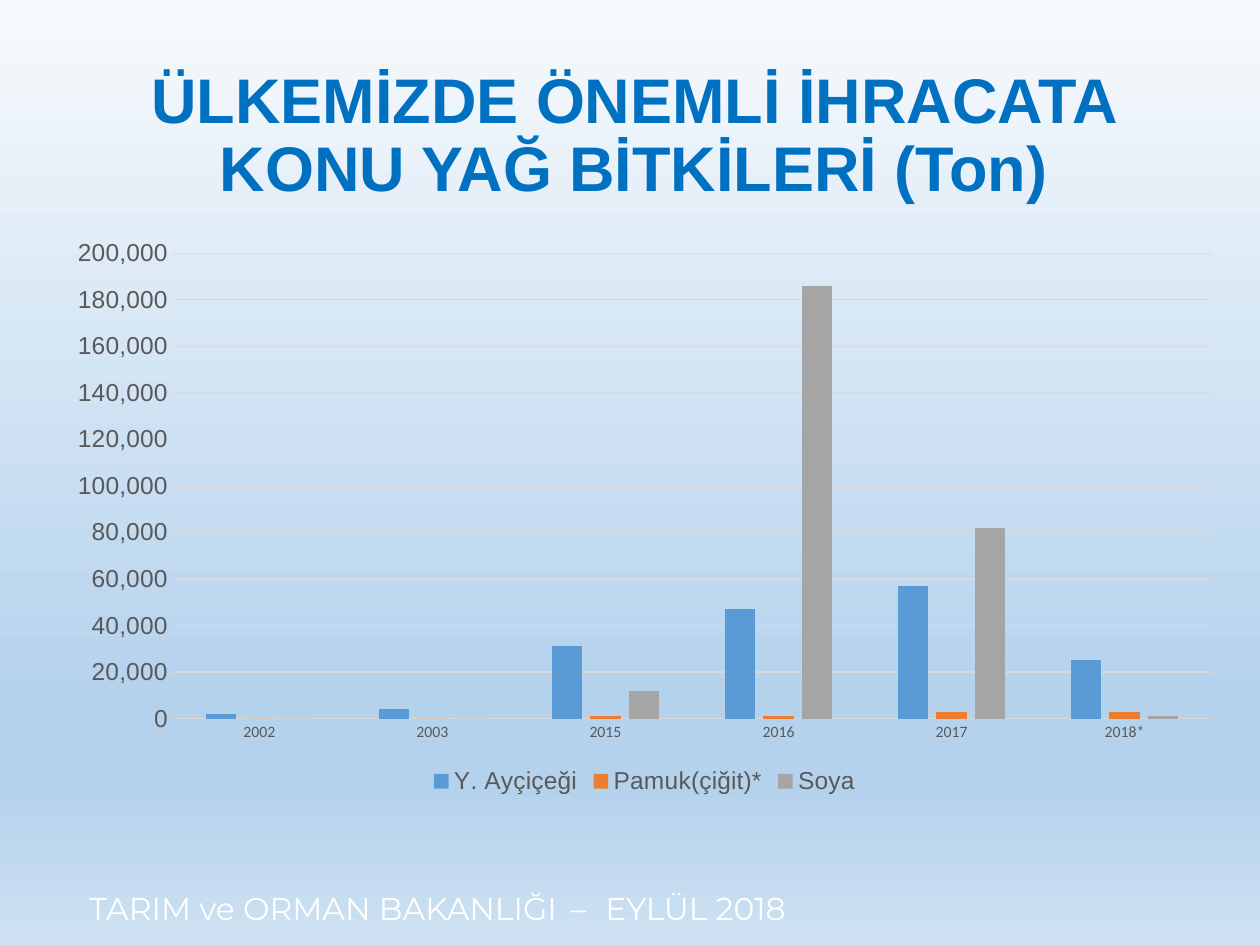
from copy import deepcopy

from pptx import Presentation
from pptx.chart.data import CategoryChartData
from pptx.dml.color import RGBColor
from pptx.enum.chart import XL_CHART_TYPE, XL_LEGEND_POSITION, XL_TICK_MARK
from pptx.enum.text import MSO_ANCHOR, MSO_AUTO_SIZE, PP_ALIGN
from pptx.oxml.ns import qn
from pptx.util import Inches, Pt

COLUMNS = XL_CHART_TYPE.COLUMN_CLUSTERED
BOTTOM = XL_LEGEND_POSITION.BOTTOM
NO_TICK = XL_TICK_MARK.NONE
MIDDLE = MSO_ANCHOR.MIDDLE
NO_FIT = MSO_AUTO_SIZE.NONE
CENTER = PP_ALIGN.CENTER

TITLE_ONLY = 5
GREY = "595959"
PALE = "D9D9D9"
BACKGROUND = [(0, "F7FAFD"), (0.74, "B5D2EC"), (0.83, "B5D2EC"), (1, "CEE1F2")]
YEARS = ["2002", "2003", "2015", "2016", "2017", "2018*"]
EXPORTS = [
    ("Y. Ayçiçeği", "5B9BD5", [2000, 4000, 31000, 47000, 57000, 25000]),
    ("Pamuk(çiğit)*", "ED7D31", [0, 0, 1000, 1000, 3000, 3000]),
    ("Soya", "A5A5A5", [0, 0, 12000, 186000, 82000, 1000]),
]


def color(value):
    """Turn a hex string into a colour."""
    return RGBColor.from_string(value)


def set_font(font, name, size, value, bold=False):
    """Set the typeface, size, colour and weight of a font."""
    font.name = name
    font.size = Pt(size)
    font.bold = bold
    font.color.rgb = color(value)


def set_line(line, value):
    """Give a chart line its colour and thin width."""
    line.color.rgb = color(value)
    line.width = Pt(0.75)


def paint_background(slide, stops):
    """Fill the slide with a gradient running from top to bottom."""
    fill = slide.background.fill
    fill.gradient()
    fill.gradient_angle = 270
    stop_list = next(slide.element.iter(qn("a:gsLst")))
    while len(stop_list) < len(stops):
        stop_list.append(deepcopy(stop_list[0]))
    for stop, (position, value) in zip(fill.gradient_stops, stops):
        stop.position = position
        stop.color.rgb = color(value)


def add_title(slide, text):
    """Place and format the title placeholder."""
    title = slide.shapes.title
    title.left, title.top = Inches(0.72), Inches(0.36)
    title.width, title.height = Inches(8.62), Inches(1.45)
    frame = title.text_frame
    frame.text = text
    frame.auto_size = NO_FIT
    frame.vertical_anchor = MIDDLE
    para = frame.paragraphs[0]
    para.alignment = CENTER
    para.line_spacing = 0.9
    set_font(para.font, "Arial", 36, "0070C0", bold=True)


def add_footer(slide, ministry, date):
    """Add the ministry and date, parted by a widely spaced dash."""
    box = slide.shapes.add_textbox(Inches(0.61), Inches(7.01), Inches(9.39), Inches(0.4))
    box.text_frame.word_wrap = True
    para = box.text_frame.paragraphs[0]
    spans = [para.add_run() for _ in range(3)]
    for span, text in zip(spans, (ministry, " – ", date)):
        span.text = text
    spans[1]._r.get_or_add_rPr().set("spc", "310")
    set_font(para.font, "Montserrat", 18, "FFFFFF")


def format_axes(chart):
    """Format both axes and the gridlines."""
    years, tons = chart.category_axis, chart.value_axis
    for axis in (years, tons):
        axis.major_tick_mark = axis.minor_tick_mark = NO_TICK
    set_font(years.tick_labels.font, "Calibri", 9, GREY)
    set_line(years.format.line, PALE)
    set_font(tons.tick_labels.font, "Arial", 14, GREY)
    tons.format.line.fill.background()
    set_line(tons.major_gridlines.format.line, PALE)
    tons.tick_labels.number_format = "#,##0"
    tons.tick_labels.number_format_is_linked = False
    tons.minimum_scale, tons.maximum_scale, tons.major_unit = 0, 200000, 20000


def add_export_chart(slide):
    """Add the clustered columns of exports by year."""
    data = CategoryChartData()
    data.categories = YEARS
    for name, _, values in EXPORTS:
        data.add_series(name, values)
    chart = slide.shapes.add_chart(
        COLUMNS, Inches(0.43), Inches(1.81), Inches(9.37), Inches(4.54), data
    ).chart
    chart.has_title = False
    set_font(chart.font, "Calibri", 10, "000000")
    plot = chart.plots[0]
    plot.gap_width, plot.overlap = 219, -27
    plot.vary_by_categories = False
    for series, (_, value, _) in zip(plot.series, EXPORTS):
        series.format.fill.solid()
        series.format.fill.fore_color.rgb = color(value)
    format_axes(chart)
    chart.has_legend = True
    chart.legend.position = BOTTOM
    chart.legend.include_in_layout = False
    set_font(chart.legend.font, "Arial", 14, GREY)


def main():
    """Build and save the slide."""
    deck = Presentation()
    deck.slide_width, deck.slide_height = Inches(10), Inches(7.5)
    slide = deck.slides.add_slide(deck.slide_layouts[TITLE_ONLY])
    paint_background(slide, BACKGROUND)
    add_footer(slide, "TARIM ve ORMAN BAKANLIĞI", "EYLÜL 2018")
    add_title(slide, "ÜLKEMİZDE ÖNEMLİ İHRACATA KONU YAĞ BİTKİLERİ (Ton)")
    add_export_chart(slide)
    deck.save("out.pptx")


if __name__ == "__main__":
    main()
